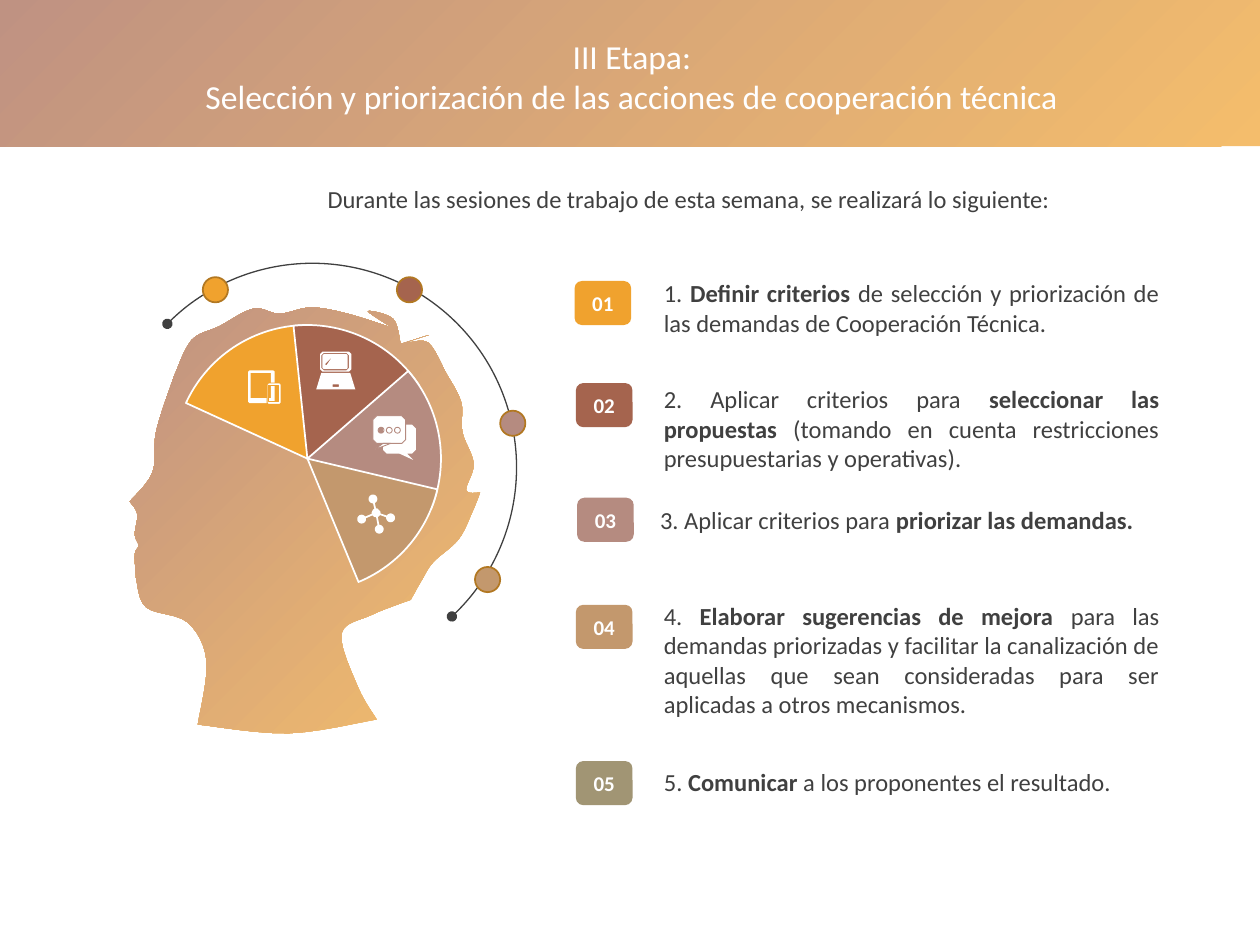
import math
import pptx
import pptx.util
import pptx.dml.color
import pptx.oxml.ns
import pptx.enum.shapes
import pptx.enum.text
import lxml.etree

KIND = pptx.enum.shapes.MSO_SHAPE
ALIGN = pptx.enum.text.PP_ALIGN
MID = pptx.enum.text.MSO_ANCHOR.MIDDLE
GROW = pptx.enum.text.MSO_AUTO_SIZE.SHAPE_TO_FIT_TEXT
SCALE = 9144  # EMU in one px, 100 px to the inch
WHITE, INK, EDGE = "FFFFFF", "404040", "B27822"
GOLD, RUST, ROSE, TAN, MOSS = "F0A22E", "A5644E", "B58B80", "C3986D", "A19574"

# Content
TITLE = ["III Etapa:",
         "Selección y priorización de las acciones de cooperación técnica"]
INTRO = "Durante las sesiones de trabajo de esta semana, se realizará lo siguiente:"
# number, colour, badge left and top, text box, (plain, bold, plain)
STEPS = [
    ("01", GOLD, (456, 223), (517, 216, 413, 57),
     ("1. ", "Definir criterios",
      " de selección y priorización de las demandas de Cooperación Técnica.")),
    ("02", RUST, (457, 304), (517, 300, 413, 81),
     ("2. Aplicar criterios para ", "seleccionar las propuestas ",
      "(tomando en cuenta restricciones presupuestarias y operativas).")),
    ("03", ROSE, (458, 395), (514, 396, 413, 34),
     ("3. Aplicar criterios para ", "priorizar las demandas.")),
    ("04", TAN, (457, 480), (517, 472, 413, 104),
     ("4. ", "Elaborar sugerencias de mejora ",
      "para las demandas priorizadas y facilitar la canalización de aquellas "
      "que sean consideradas para ser aplicadas a otros mecanismos.")),
    ("05", MOSS, (457, 604), (517, 604, 398, 34),
     ("5. ", "Comunicar", " a los proponentes el resultado.")),
]
# colour, start and end in degrees
WEDGES = [(GOLD, 204.6, 270), (RUST, 264, 326.5),
          (ROSE, 319, 22.3), (TAN, 13.3, 67.5)]
DOTS = [(GOLD, 161, 220), (RUST, 315, 220), (ROSE, 397, 326), (TAN, 377, 450)]

# Smooth runs of the head outline, meeting at sharp corners
HEAD = [
    # brow and hair
    [(103, 398), (121, 375), (124, 342), (138, 299)],
    [(138, 299), (152, 270), (174, 259), (201, 245), (222, 249), (247, 244),
     (276, 249), (311, 260)],
    [(311, 260), (292, 247), (312, 253), (318, 273)],
    [(318, 273), (340, 266), (323, 272), (340, 272), (354, 296)],
    # back of the head
    [(354, 296), (366, 319), (367, 343), (376, 368), (370, 389), (381, 391)],
    [(381, 391), (375, 406), (364, 428), (344, 446), (335, 460), (326, 476)],
    # neck
    [(326, 476), (295, 488), (271, 503), (284, 545), (299, 571)],
    [(299, 571), (229, 582), (157, 575)],
    [(157, 575), (164, 525), (149, 494), (116, 482), (108, 459)],
    # chin, lips and nose
    [(108, 459), (107, 440), (110, 433), (107, 424), (109, 408), (103, 398)],
]


# Outline helpers
def curve(run):
    """Points of a smooth line through all the points of a run."""
    ends = [run[0]] + run + [run[-1]]
    return [tuple((2 * b + (c - a) * t + (2 * a - 5 * b + 4 * c - d) * t ** 2
                   + (3 * b - a - 3 * c + d) * t ** 3) / 2
                  for a, b, c, d in zip(*quad))
            for quad in zip(ends, ends[1:], ends[2:], ends[3:])
            for t in (i / 6 for i in range(6))]


def box(l, t, r, b, cut=0):
    return [(l + cut, t), (r - cut, t), (r, t + cut), (r, b - cut),
            (r - cut, b), (l + cut, b), (l, b - cut), (l, t + cut)]


def ring(x, y, rad, start=0, sweep=360, steps=20):
    turns = [math.radians(start + sweep * i / steps) for i in range(steps + 1)]
    return [(x + rad * math.cos(a), y + rad * math.sin(a)) for a in turns]


def web(x, y, rad, nodes):
    """Hub and nodes joined by thin spokes, as one outline."""
    pts = []
    for ang, dist in sorted((math.degrees(math.atan2(v - y, u - x)),
                             math.hypot(u - x, v - y)) for u, v in nodes):
        ray = math.radians(ang)
        pts += ring(x, y, rad, ang - 35, 24, 4)
        pts += ring(x + dist * math.cos(ray), y + dist * math.sin(ray),
                    rad, ang - 168, 336)
        pts += ring(x, y, rad, ang + 11, 24, 4)
    return pts


# Icons: outlines with holes, and an edge in the wedge's colour or none
ICONS = [
    # laptop
    ([box(254, 279, 279, 295, 2), box(255, 280, 277, 294, 2),
      box(256, 281, 276, 293, 1), [(264, 283), (258, 289), (259, 290)],
      [(255, 296), (278, 296), (282, 309), (251, 309)],
      box(264, 305, 269, 307)], None),
    # tablet and phone
    ([box(197, 294, 218, 320, 1), box(199, 296, 215, 316)], None),
    ([box(212, 304, 223, 321, 1), box(213, 306, 221, 319)], GOLD),
    # network
    ([web(298.5, 407, 3.5, [(296, 396), (310, 411), (301, 420), (287, 412)])],
     None),
    # speech bubbles
    ([box(304, 337, 330, 360, 3), [(317, 360), (323, 360), (328, 365)]], None),
    ([box(296, 330, 322, 352, 3), [(304, 352), (310, 352), (297, 357)]]
     + [ring(x, 341.5, 2.3) for x in (302.5, 309, 315.5)], ROSE),
]


# Drawing helpers
def px(*vals):
    return [round(v * SCALE) for v in vals]


def hue(code):
    return pptx.dml.color.RGBColor.from_string(code)


def paint(shape, fill=None, line=None, width=1):
    shape.shadow.inherit = False
    if fill:
        shape.fill.solid()
        shape.fill.fore_color.rgb = hue(fill)
    else:
        shape.fill.background()
    if line:
        shape.line.color.rgb = hue(line)
        shape.line.width = pptx.util.Pt(width)
    else:
        shape.line.fill.background()
    return shape


def fade(shape):
    """Gold to rust, toward the upper left, 70 % opaque."""
    paint(shape).fill.gradient()
    shape.fill.gradient_angle = 135
    for stop, code in zip(shape.fill.gradient_stops, (GOLD, RUST)):
        stop.color.rgb = hue(code)
    for node in shape.fill._xPr.iter(pptx.oxml.ns.qn("a:srgbClr")):
        lxml.etree.SubElement(node, pptx.oxml.ns.qn("a:alpha"), val="70000")


def trace(shapes, loops):
    pen = shapes.build_freeform(*px(*loops[0][0]), scale=1.0)
    for i, loop in enumerate(loops):
        if i:
            pen.move_to(*px(*loop[0]))
        pen.add_line_segments([px(*pt) for pt in loop[1:]], close=True)
    return pen.convert_to_shape()


def style(run, size, code, bold=False):
    run.font.name, run.font.size = "Calibri", pptx.util.Pt(size)
    run.font.color.rgb, run.font.bold = hue(code), bold


def write(shapes, area, parts, align):
    frame = shapes.add_textbox(*px(*area)).text_frame
    frame.word_wrap, frame.auto_size = True, GROW
    para = frame.paragraphs[0]
    para.alignment = align
    for i, part in enumerate(parts):
        run = para.add_run()
        run.text = part
        style(run, 14, INK, i == 1)
    return frame


def main():
    deck = pptx.Presentation()
    deck.slide_width, deck.slide_height = px(1000, 750)
    shapes = deck.slides.add_slide(deck.slide_layouts[6]).shapes

    # Header band and title
    fade(shapes.add_shape(KIND.RECTANGLE, *px(0, 0, 1000, 116)))
    frame = shapes.add_textbox(*px(27, 21, 949, 79)).text_frame
    frame.word_wrap, frame.vertical_anchor = True, MID
    frame.text = "\n".join(TITLE)
    for para in frame.paragraphs:
        para.alignment = ALIGN.CENTER
        style(para.runs[0], 19.2, WHITE)

    # Head with its wedges
    fade(trace(shapes, [[pt for run in HEAD for pt in curve(run)]]))
    for code, start, end in WEDGES:
        pie = shapes.add_shape(KIND.PIE, *px(138, 258, 212, 212))
        pie.adjustments[0], pie.adjustments[1] = start * 0.6, end * 0.6
        paint(pie, code, WHITE)

    # Arc with its dots
    arc = shapes.add_shape(KIND.ARC, *px(86, 209, 324, 324))
    arc.adjustments[0], arc.adjustments[1] = 224.7 * 0.6, 46.9 * 0.6
    paint(arc, None, INK, 0.75)
    for tag in ("a:headEnd", "a:tailEnd"):
        lxml.etree.SubElement(arc.line._get_or_add_ln(),
                              pptx.oxml.ns.qn(tag), type="oval")
    for code, x, y in DOTS:
        paint(shapes.add_shape(KIND.OVAL, *px(x, y, 20, 20)), code, EDGE)

    # Icons
    for loops, edge in ICONS:
        paint(trace(shapes, loops), WHITE, edge, 0.5)

    # Intro and steps
    frame = write(shapes, (251, 141, 666, 34), [INTRO], ALIGN.LEFT)
    frame.margin_left, frame.margin_right = px(9, 9)
    for num, code, spot, area, parts in STEPS:
        write(shapes, area, parts, ALIGN.LEFT if num == "03" else ALIGN.JUSTIFY)
        badge = shapes.add_shape(KIND.ROUNDED_RECTANGLE, *px(*spot, 45, 35))
        paint(badge, code).text_frame.text = num
        badge.text_frame.vertical_anchor = MID
        para = badge.text_frame.paragraphs[0]
        para.alignment = ALIGN.CENTER
        style(para.runs[0], 12, WHITE, True)

    deck.save("out.pptx")


if __name__ == "__main__":
    main()
